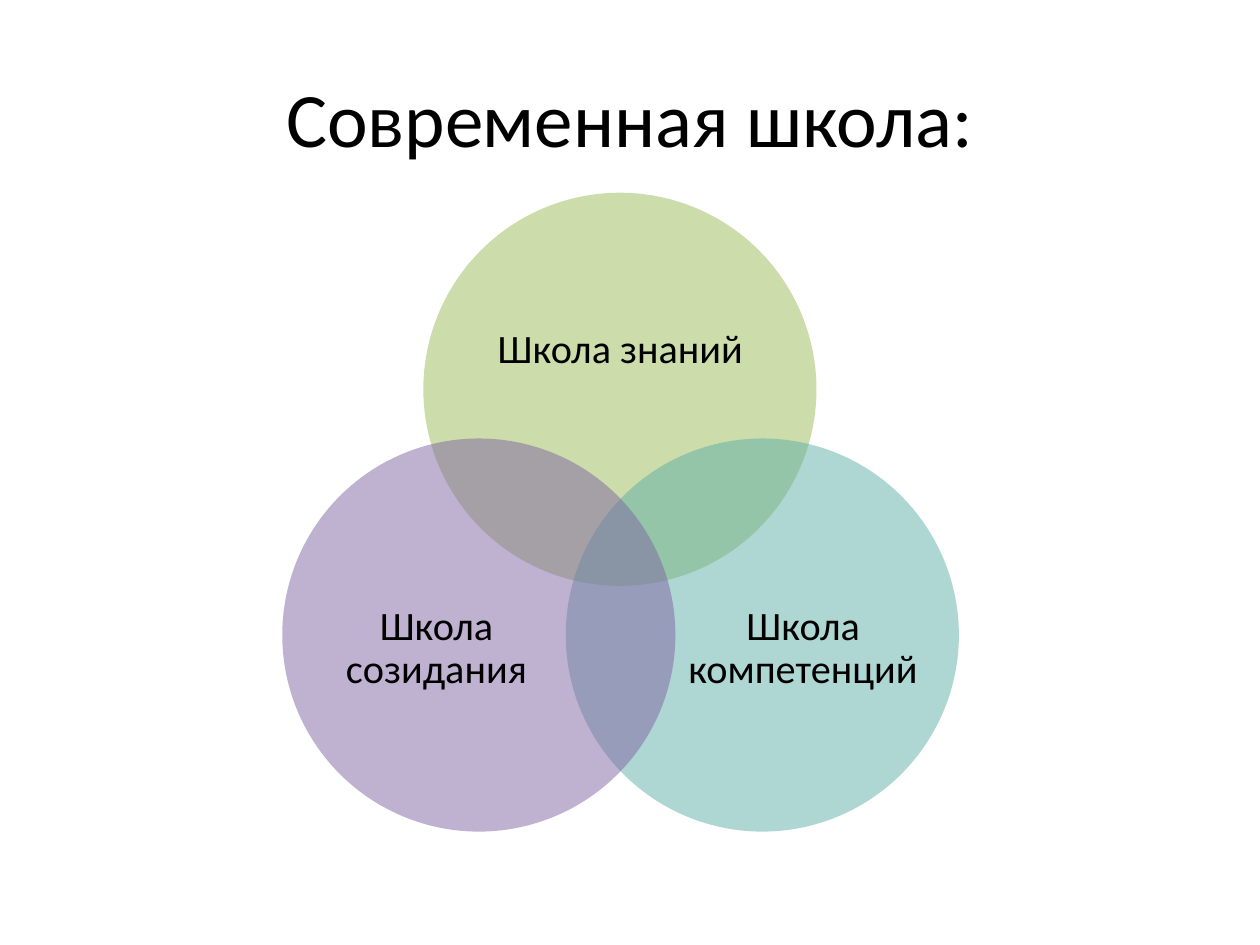
from lxml import etree
from pptx import Presentation
from pptx.dml.color import RGBColor
from pptx.enum.shapes import MSO_SHAPE
from pptx.enum.text import MSO_ANCHOR, PP_ALIGN
from pptx.oxml.ns import qn
from pptx.util import Inches, Pt

OVAL = MSO_SHAPE.OVAL
MIDDLE = MSO_ANCHOR.MIDDLE
CENTER = PP_ALIGN.CENTER

BLACK = RGBColor(0x00, 0x00, 0x00)
GREEN = RGBColor(0x9B, 0xBB, 0x59)
TEAL = RGBColor(0x5E, 0xAF, 0xA6)
PURPLE = RGBColor(0x80, 0x64, 0xA2)

SIZE = 3.12  # circle diameter, inches
LOW = 3.48   # top of the two lower circles
SIDE = (4.29, 1.87, 1.72)  # top, width, height of the lower labels


def add_text(frame, text, size):
    frame.word_wrap = True
    frame.vertical_anchor = MIDDLE
    para = frame.paragraphs[0]
    para.alignment = CENTER
    run = para.add_run()
    run.text = text
    run.font.name = "Calibri"
    run.font.size = Pt(size)
    run.font.color.rgb = BLACK
    return para


prs = Presentation()
prs.slide_width = Inches(10)
prs.slide_height = Inches(7.5)
slide = prs.slides.add_slide(prs.slide_layouts[5])

title = slide.shapes.title
title.left, title.top = Inches(0.5), Inches(0.3)
title.width, title.height = Inches(9), Inches(1.25)
add_text(title.text_frame, "Современная школа:", 44)

# Circle left and top, colour, label, label left, then top, width, height
circles = [
    (3.36, 1.53, GREEN, "Школа знаний", 3.78, (2.08, 2.29, 1.4)),
    (4.49, LOW, TEAL, "Школа компетенций", 5.44, SIDE),
    (2.24, LOW, PURPLE, "Школа созидания", 2.53, SIDE),
]
for left, top, color, text, start, box in circles:
    disc = slide.shapes.add_shape(
        OVAL, Inches(left), Inches(top), Inches(SIZE), Inches(SIZE))
    disc.shadow.inherit = False
    disc.fill.solid()
    disc.fill.fore_color.rgb = color
    disc.line.fill.background()
    tint = disc.fill._xPr.find(qn("a:solidFill"))[0]
    etree.SubElement(tint, qn("a:alpha")).set("val", "50000")

    label = slide.shapes.add_textbox(Inches(start), *map(Inches, box))
    frame = label.text_frame
    frame.margin_left = frame.margin_right = 0
    frame.margin_top = frame.margin_bottom = 0
    para = add_text(frame, text, 23)
    para.line_spacing = 0.9

prs.save("out.pptx")
